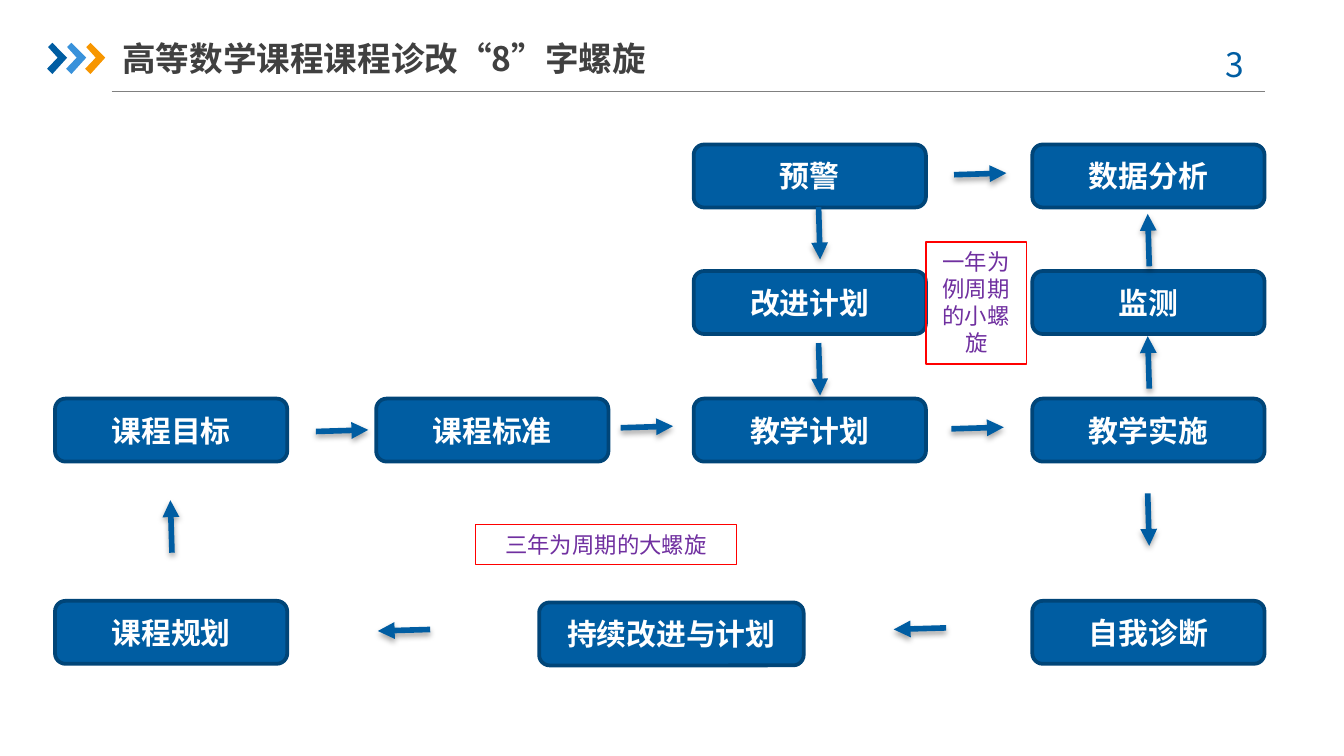
from lxml import etree
from pptx import Presentation
from pptx.dml.color import RGBColor
from pptx.enum import shapes, text
from pptx.oxml import ns
from pptx.util import Cm, Pt

BLUE = RGBColor(0x00, 0x5D, 0xA2)
NAVY = RGBColor(0x00, 0x45, 0x78)
SKY = RGBColor(0x39, 0x92, 0xDB)
ORANGE = RGBColor(0xF7, 0x96, 0x00)
GREY = RGBColor(0x80, 0x80, 0x80)
DARK = RGBColor(0x40, 0x40, 0x40)
WHITE = RGBColor(0xFF, 0xFF, 0xFF)
RED = RGBColor(0xFF, 0x00, 0x00)
PURPLE = RGBColor(0x70, 0x30, 0xA0)
CJK = "Noto Sans CJK SC"

# Content; lengths are in centimetres
TITLE = "高等数学课程课程诊改“8”字螺旋"
PAGE_NUMBER = "3"
COLUMNS = [1.04, 7.11, 13.11, 19.51]
ROWS = [2.73, 5.12, 7.53, 11.35]
BOX_WIDTH, BOX_HEIGHT = 4.39, 1.19
GRID = [
    (None, None, "预警", "数据分析"),
    (None, None, "改进计划", "监测"),
    ("课程目标", "课程标准", "教学计划", "教学实施"),
    ("课程规划", None, None, "自我诊断"),
]
WIDE_BOX = ("持续改进与计划", 10.19, 11.38, 5.0, BOX_HEIGHT)
ARROW_STEPS = {"right": (1, -0.03), "left": (-1, 0.03),
               "up": (-0.03, -1), "down": (0.03, 1)}
ARROW_STARTS = {
    "right": [(5.97, 8.15), (11.73, 8.08), (17.98, 8.1), (18.03, 3.3)],
    "left": [(8.13, 11.89), (17.88, 11.86)],
    "up": [(21.72, 5.03), (21.72, 7.34), (3.25, 10.44)],
    "down": [(15.47, 3.91), (15.47, 6.48), (21.69, 9.32)],
}
ARROW_LENGTH = 0.99
NOTES = [("三年为周期的大螺旋", 8.99, 9.91, 4.93, 0.76),
         ("一年为例周期的小螺旋", 17.5, 4.57, 1.9, 2.31)]
CHEVRON = [(0.91, 0.89), (0.99, 0.81), (1.27, 1.09),
           (0.99, 1.4), (0.89, 1.3), (1.09, 1.09)]
CHEVRON_STEP = 0.36

TITLE_FONT = {"size": Pt(18), "bold": True, "name": CJK}
NUMBER_FONT = {"size": Pt(18), "bold": False, "name": CJK}
BOX_FONT = {"size": Pt(16), "bold": True, "name": "Calibri"}
NOTE_FONT = {"size": Pt(12), "bold": False, "name": CJK}


def write(shape, words, font, color, align=text.PP_ALIGN.CENTER,
          anchor=text.MSO_ANCHOR.MIDDLE, spacing=None):
    frame = shape.text_frame
    frame.word_wrap = True
    frame.auto_size = text.MSO_AUTO_SIZE.NONE
    frame.vertical_anchor = anchor
    para = frame.paragraphs[0]
    para.alignment = align
    para.line_spacing = spacing
    span = para.add_run()
    span.text = words
    for name, value in font.items():
        setattr(span.font, name, value)
    span.font.color.rgb = color
    east_asian = etree.SubElement(span.font._element, ns.qn("a:ea"))
    east_asian.set("typeface", CJK)


def add_box(page, kind, place, line_color, line_width, fill=None):
    box = page.shapes.add_shape(kind, *map(Cm, place))
    box.shadow.inherit = False
    if fill is None:
        box.fill.background()
    else:
        box.fill.solid()
        box.fill.fore_color.rgb = fill
    box.line.color.rgb = line_color
    box.line.width = Pt(line_width)
    return box


def add_line(page, start, end, color, width):
    line = page.shapes.add_connector(
        shapes.MSO_CONNECTOR.STRAIGHT, *map(Cm, (*start, *end)))
    line.line.color.rgb = color
    line.line.width = Pt(width)
    effects = etree.SubElement(line._element.spPr, ns.qn("a:effectLst"))
    return line, effects


def add_arrow(page, start, step):
    end = [place + ARROW_LENGTH * part for place, part in zip(start, step)]
    arrow, effects = add_line(page, start, end, BLUE, 3)
    etree.SubElement(arrow.line._get_or_add_ln(), ns.qn("a:tailEnd"), type="triangle")
    shadow = etree.SubElement(effects, ns.qn("a:outerShdw"), blurRad=str(Pt(3.1)),
                              dist=str(Pt(1.8)), dir="5400000", rotWithShape="0")
    black = etree.SubElement(shadow, ns.qn("a:srgbClr"), val="000000")
    etree.SubElement(black, ns.qn("a:alpha"), val="35000")


def add_header(page):
    add_line(page, (2.11, 1.73), (23.9, 1.73), GREY, 0.75)
    for index, color in enumerate((BLUE, SKY, ORANGE)):
        points = [(Cm(x + index * CHEVRON_STEP), Cm(y)) for x, y in CHEVRON]
        builder = page.shapes.build_freeform(*points[0])
        builder.add_line_segments(points[1:])
        chevron = builder.convert_to_shape()
        chevron.shadow.inherit = False
        chevron.fill.solid()
        chevron.fill.fore_color.rgb = color
        chevron.line.fill.background()

    number = page.shapes.add_textbox(Cm(22.42), Cm(0.66), Cm(1.85), Cm(1.02))
    write(number, PAGE_NUMBER, NUMBER_FONT, BLUE,
          anchor=text.MSO_ANCHOR.TOP, spacing=Pt(23))

    title = page.shapes.title
    title.left, title.top, title.width, title.height = map(Cm, (2.31, 0.56, 13.18, 1.07))
    title.text_frame.margin_left = title.text_frame.margin_right = 0
    write(title, TITLE, TITLE_FONT, DARK, align=text.PP_ALIGN.LEFT)


def main():
    deck = Presentation()
    deck.slide_width, deck.slide_height = Cm(25.4), Cm(14.28)
    page = deck.slides.add_slide(deck.slide_layouts[5])
    add_header(page)

    # Process steps
    steps = [(words, x, y, BOX_WIDTH, BOX_HEIGHT)
             for y, row in zip(ROWS, GRID)
             for x, words in zip(COLUMNS, row) if words]
    for words, *place in steps + [WIDE_BOX]:
        box = add_box(page, shapes.MSO_SHAPE.ROUNDED_RECTANGLE, place, NAVY, 2, BLUE)
        write(box, words, BOX_FONT, WHITE)

    # Flow arrows
    for direction, starts in ARROW_STARTS.items():
        for start in starts:
            add_arrow(page, start, ARROW_STEPS[direction])

    # Cycle notes
    for words, *place in NOTES:
        note = add_box(page, shapes.MSO_SHAPE.RECTANGLE, place, RED, 0.75)
        write(note, words, NOTE_FONT, PURPLE,
              anchor=text.MSO_ANCHOR.TOP, spacing=Pt(14.4))

    deck.save("out.pptx")


if __name__ == "__main__":
    main()
